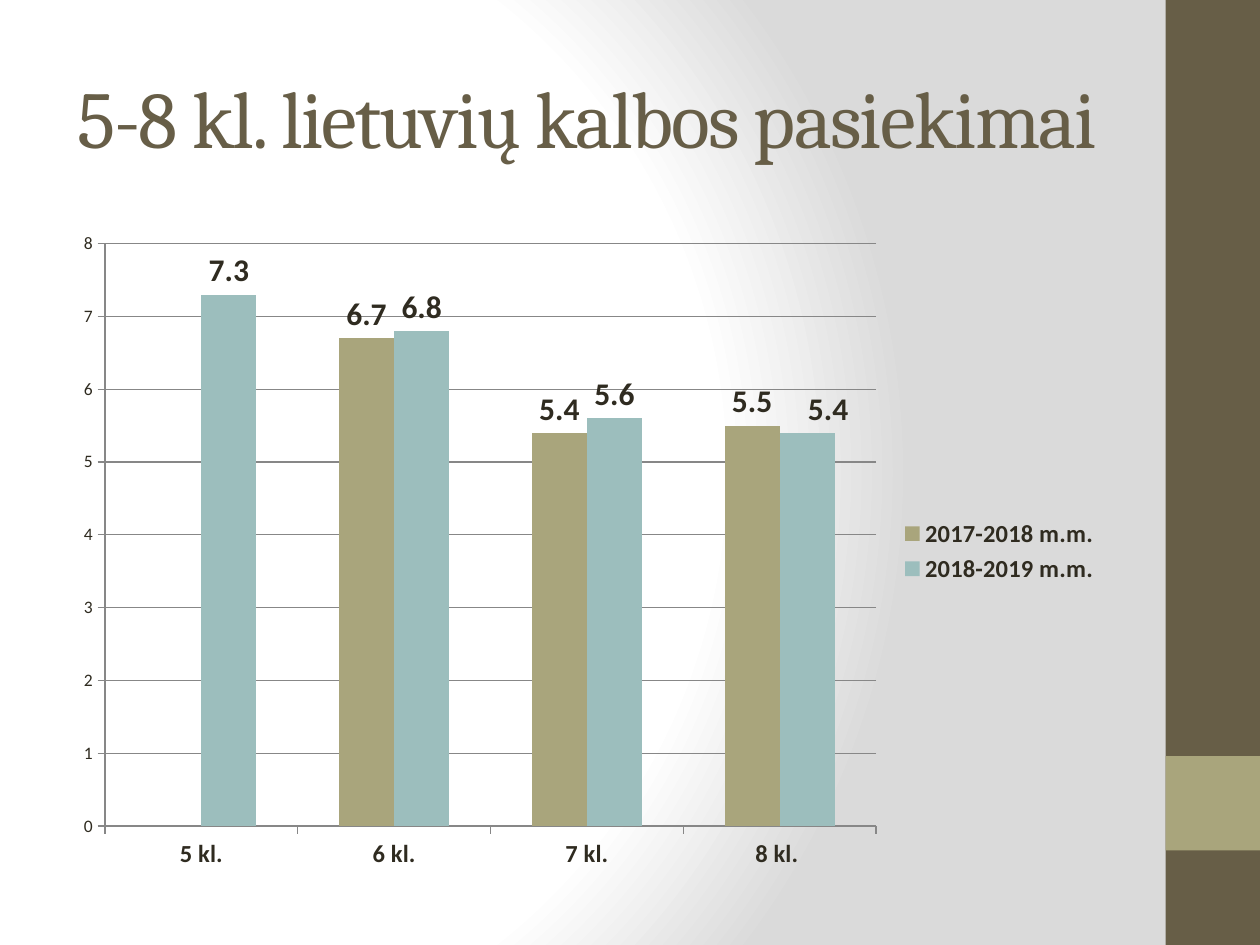
from dataclasses import dataclass

from pptx import Presentation, util as u
from pptx.chart.data import CategoryChartData
from pptx.dml.color import RGBColor
from pptx.enum import chart as charts, shapes, text
from pptx.oxml import parse_xml
from pptx.oxml.ns import nsdecls, qn


@dataclass(frozen=True)
class Theme:
    brown: str = "675E47"
    olive: str = "A9A57C"
    teal: str = "9CBEBD"
    ink: str = "2F2B20"
    line: str = "878787"
    white: str = "FFFFFF"
    grey: str = "DADADA"
    heading: str = "Cambria"
    body: str = "Calibri"
    title_size: int = 46
    value_size: int = 18
    label_size: int = 14
    tick_size: int = 10


def apply(target, **formats):
    for name, value in formats.items():
        setattr(target, name, value)


class SlideBuilder:
    """Places elements on a grid of quarter-inch columns and rows."""

    CELL = 0.25

    def __init__(self, deck, theme):
        self.theme = theme
        self.page = deck.slides.add_slide(deck.slide_layouts[6])

    def area(self, *cells):
        return [u.Inches(cell * self.CELL) for cell in cells]

    def font(self, font, size, color, face=None, bold=False):
        apply(font, size=u.Pt(size), bold=bold, name=face or self.theme.body)
        font.color.rgb = RGBColor.from_string(color)

    def background(self, stops):
        """Radial gradient centred on the middle of the right part."""
        self.page.background.fill.gradient()
        old = self.page.element.find(".//" + qn("a:gradFill"))
        marks = "".join(
            f'<a:gs pos="{share * 1000}"><a:srgbClr val="{color}"/></a:gs>'
            for share, color in stops
        )
        old.getparent().replace(old, parse_xml(
            f'<a:gradFill {nsdecls("a")} rotWithShape="1"><a:gsLst>{marks}</a:gsLst>'
            '<a:path path="circle"><a:fillToRect l="20000" t="50000" '
            'r="100000" b="50000"/></a:path></a:gradFill>'
        ))

    def band(self, cells, color):
        box = self.page.shapes.add_shape(shapes.MSO_SHAPE.RECTANGLE, *self.area(*cells))
        box.shadow.inherit = False
        box.fill.solid()
        box.fill.fore_color.rgb = RGBColor.from_string(color)
        box.line.fill.background()

    def title(self, cells, words):
        frame = self.page.shapes.add_textbox(*self.area(*cells)).text_frame
        apply(frame, word_wrap=True, vertical_anchor=text.MSO_ANCHOR.MIDDLE,
              margin_left=0, margin_right=0)
        para = frame.paragraphs[0]
        para.alignment = text.PP_ALIGN.CENTER
        span = para.add_run()
        span.text = words
        self.font(span.font, self.theme.title_size, self.theme.brown, self.theme.heading)
        span.font._element.set("spc", "-100")

    def columns(self, cells, categories, series):
        """Clustered columns; series maps a name to its values and colour."""
        data = CategoryChartData()
        data.categories = categories
        for name, (values, _) in series.items():
            data.add_series(name, values)
        chart = self.page.shapes.add_chart(
            charts.XL_CHART_TYPE.COLUMN_CLUSTERED, *self.area(*cells), data).chart
        theme = self.theme
        self.font(chart.font, theme.tick_size, theme.ink)
        apply(chart, has_title=False, has_legend=True)
        apply(chart.legend, position=charts.XL_LEGEND_POSITION.RIGHT, include_in_layout=False)
        self.font(chart.legend.font, theme.label_size, theme.ink, bold=True)
        self.font(chart.category_axis.tick_labels.font, theme.label_size, theme.ink, bold=True)
        apply(chart.value_axis, minimum_scale=0, maximum_scale=8, major_unit=1,
              has_major_gridlines=True)
        for part in (chart.category_axis, chart.value_axis, chart.value_axis.major_gridlines):
            part.format.line.color.rgb = RGBColor.from_string(theme.line)
            part.format.line.width = u.Pt(0.75)
        for axis in (chart.category_axis, chart.value_axis):
            axis.major_tick_mark = charts.XL_TICK_MARK.OUTSIDE
        plot = chart.plots[0]
        apply(plot, gap_width=150, overlap=0, vary_by_categories=False)
        for column, (_, color) in zip(plot.series, series.values()):
            column.format.fill.solid()
            column.format.fill.fore_color.rgb = RGBColor.from_string(color)
            labels = column.data_labels
            labels.show_value = True
            self.value_label(labels)
        return chart

    def value_label(self, label):
        label.position = charts.XL_LABEL_POSITION.OUTSIDE_END
        self.font(label.font, self.theme.value_size, self.theme.ink, bold=True)

    def shift_label(self, chart, series, point, share):
        """Move one value label right by a share of the chart's width."""
        column = chart.plots[0].series[series]
        self.value_label(column.points[point].data_label)
        index = column._element.find(".//" + qn("c:dLbl") + "/" + qn("c:idx"))
        index.addnext(parse_xml(
            f'<c:layout {nsdecls("c")}><c:manualLayout><c:x val="{share}"/>'
            '<c:y val="0"/></c:manualLayout></c:layout>'
        ))


def main():
    deck = Presentation()
    apply(deck, slide_width=u.Inches(10), slide_height=u.Inches(7.5))
    theme = Theme()
    builder = SlideBuilder(deck, theme)
    builder.background([(0, theme.white), (75, theme.white), (100, theme.grey)])
    builder.band((37, 0, 3, 30), theme.brown)
    builder.band((37, 24, 3, 3), theme.olive)
    builder.title((2, 1.2, 33.3, 5), "5-8 kl. lietuvių kalbos pasiekimai")
    chart = builder.columns(
        (2, 7, 33.3, 21),
        ["5 kl.", "6 kl.", "7 kl.", "8 kl. "],
        {
            "2017-2018 m.m.": ((None, 6.7, 5.4, 5.5), theme.olive),
            "2018-2019 m.m.": ((7.3, 6.8, 5.6, 5.4), theme.teal),
        },
    )
    builder.shift_label(chart, series=1, point=3, share=0.02)
    deck.save("out.pptx")


if __name__ == "__main__":
    main()
